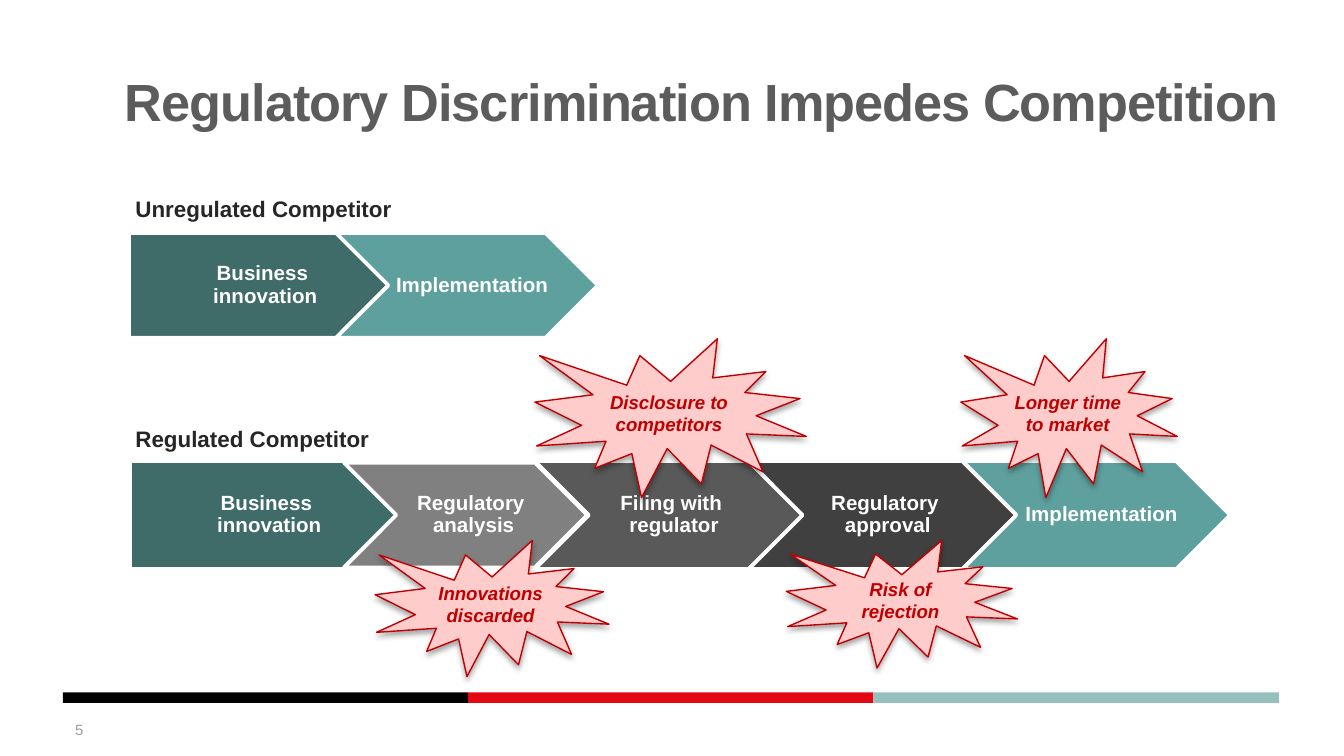
from lxml import etree
from pptx import Presentation
from pptx.dml.color import RGBColor as RGB
from pptx.enum.shapes import MSO_SHAPE as Shape
from pptx.enum.text import MSO_ANCHOR as Anchor, MSO_AUTO_SIZE as AutoSize, PP_ALIGN as Align
from pptx.oxml.ns import qn
from pptx.util import Cm, Pt

COLORS = {
    "white": "FFFFFF", "black": "000000", "red": "E30613", "pale teal": "94BFBD",
    "title": "5C5C5C", "number": "9C9C9C", "label": "262626",
    "dark teal": "3F6B69", "teal": "5EA09E",
    "light gray": "808080", "gray": "595959", "dark gray": "404040",
    "pink": "FFCCCC", "crimson": "C00000",
}


def write(shape, text, size, color, bold=True, italic=False, align=Align.LEFT,
          anchor=Anchor.MIDDLE, wrap=True, margins=(0.25, 0.13, 0.25, 0.13),
          line_spacing=1.0, tracking=None):
    frame = shape.text_frame
    frame.auto_size = AutoSize.NONE
    frame.word_wrap = wrap
    frame.vertical_anchor = anchor
    (frame.margin_left, frame.margin_top,
     frame.margin_right, frame.margin_bottom) = [Cm(m) for m in margins]
    frame.text = text
    paragraph = frame.paragraphs[0]
    paragraph.alignment = align
    paragraph.line_spacing = line_spacing
    for run in paragraph.runs:
        run.font.name = "Arial"
        run.font.size = Pt(size)
        run.font.bold = bold
        run.font.italic = italic
        run.font.color.rgb = RGB.from_string(COLORS[color])
        if tracking:
            run.font._element.set("spc", str(int(tracking * 100)))


def paint(shape, fill, line=None, width=0):
    shape.shadow.inherit = False
    shape.fill.solid()
    shape.fill.fore_color.rgb = RGB.from_string(COLORS[fill])
    if line:
        shape.line.color.rgb = RGB.from_string(COLORS[line])
        shape.line.width = Pt(width)
    else:
        shape.line.fill.background()


deck = Presentation()
deck.slide_width, deck.slide_height = Cm(25.4), Cm(14.28)
slide = deck.slides.add_slide(deck.slide_layouts[5])
shapes = slide.shapes

title = shapes.title
title.left, title.top, title.width, title.height = Cm(2.11), Cm(0.99), Cm(23.29), Cm(1.83)
write(title, "Regulatory Discrimination Impedes Competition", 28, "title", tracking=-0.5)

band_width = 7.66
for i, color in enumerate(["black", "red", "pale teal"]):
    band = shapes.add_shape(Shape.RECTANGLE, Cm(1.19 + i * band_width), Cm(13.08),
                            Cm(band_width), Cm(0.2))
    paint(band, color)

page_number = shapes.add_textbox(Cm(1.17), Cm(13.41), Cm(5.92), Cm(0.76))
write(page_number, "5", 8, "number", bold=False)

regulated = [
    ("Business \vinnovation", "dark teal", 5.06, 2.04),
    ("Regulatory\v analysis", "light gray", 4.6, 1.98),
    ("Filing with \vregulator", "gray", 5.06, 2.04),
    ("Regulatory \vapproval", "dark gray", 5.06, 2.04),
    ("Implementation", "teal", 5.06, 2.04),
]
unregulated = [
    ("Business \vinnovation", "dark teal", 4.95, 1.98),
    ("Implementation", "teal", 4.95, 1.98),
]
for steps, start, middle, overlap in [(regulated, 2.46, 9.73, 0),
                                      (unregulated, 2.44, 5.39, 0.05)]:
    left = start
    for i, (text, color, width, height) in enumerate(steps):
        tip = height / 2
        top, bottom, right = middle - tip, middle + tip, left + width
        outline = [(right - tip, top), (right, middle), (right - tip, bottom), (left, bottom)]
        if i > 0:
            outline.append((left + tip, middle))
        builder = shapes.build_freeform(Cm(left), Cm(top))
        builder.add_line_segments([(Cm(x), Cm(y)) for x, y in outline], close=True)
        step = builder.convert_to_shape()
        paint(step, color, "white", 2)
        write(step, text, 11, "white", align=Align.CENTER,
              margins=(0.2, 0.08, 0, 0.08), line_spacing=0.9)
        left = right - tip - overlap

for text, top, width in [("Unregulated Competitor", 3.56, 5.41),
                         ("Regulated Competitor", 7.9, 4.98)]:
    row_label = shapes.add_textbox(Cm(2.31), Cm(top), Cm(width), Cm(0.76))
    write(row_label, text, 12, "label", anchor=Anchor.TOP, wrap=False)

burdens = [
    ("Longer time to market", 18.16, 6.4, 4.09, 3),
    ("Disclosure to competitors", 10.11, 6.4, 5.13, 3),
    ("Risk of rejection", 14.86, 10.21, 4.37, 2.41),
    ("Innovations discarded", 7.09, 10.21, 4.42, 2.57),
]
for text, left, top, width, height in burdens:
    burst = shapes.add_shape(Shape.EXPLOSION1, Cm(left), Cm(top), Cm(width), Cm(height))
    paint(burst, "pink", "crimson", 0.75)
    effects = burst._element.spPr.find(qn("a:effectLst"))
    shadow = etree.SubElement(effects, qn("a:outerShdw"), blurRad=str(Pt(3.1)),
                              dist=str(Pt(1.8)), dir="5400000", rotWithShape="0")
    shade = etree.SubElement(shadow, qn("a:srgbClr"), val=COLORS["black"])
    etree.SubElement(shade, qn("a:alpha"), val="35000")
    write(burst, text, 10, "crimson", italic=True, align=Align.CENTER,
          margins=(0, 0.13, 0, 0.13))

deck.save("out.pptx")
